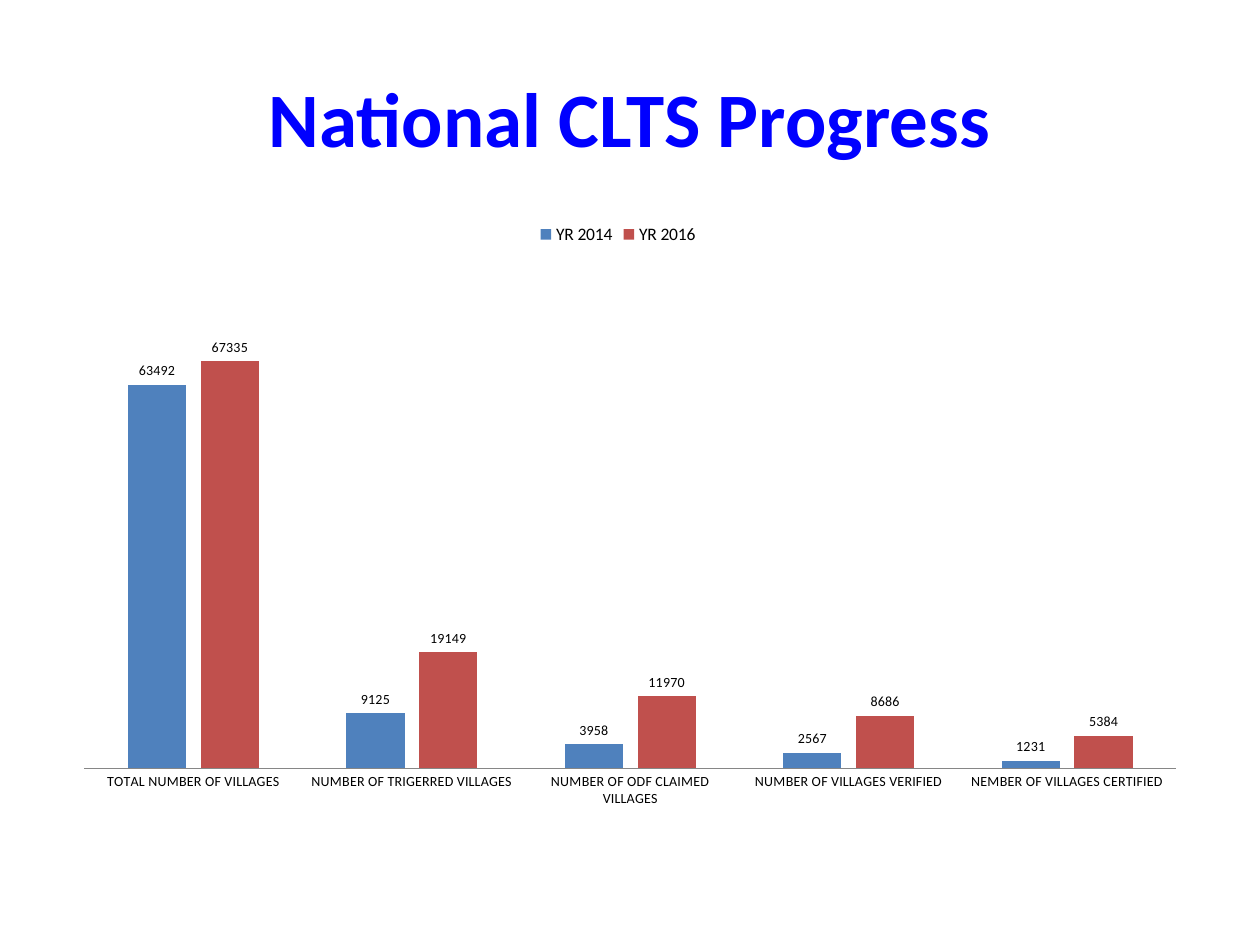
from lxml import etree
from pptx import Presentation
from pptx.chart.data import CategoryChartData
from pptx.dml.color import RGBColor
from pptx.enum.chart import (XL_CHART_TYPE as ChartType, XL_LABEL_POSITION as LabelPosition,
                             XL_LEGEND_POSITION as LegendPosition, XL_TICK_MARK as TickMark)
from pptx.enum.text import MSO_ANCHOR as Anchor, PP_ALIGN as Align
from pptx.oxml.ns import qn
from pptx.util import Inches, Pt

HEADING = "National CLTS Progress"
STAGES = [
    "TOTAL NUMBER OF VILLAGES",
    "NUMBER OF TRIGERRED VILLAGES",
    "NUMBER OF ODF CLAIMED VILLAGES",
    "NUMBER OF VILLAGES VERIFIED",
    "NEMBER OF VILLAGES CERTIFIED",
]
VILLAGES = {
    "YR 2014": (63492, 9125, 3958, 2567, 1231),
    "YR 2016": (67335, 19149, 11970, 8686, 5384),
}
THEME = {
    "font": "Calibri",
    "heading": "0000FF", "text": "000000", "axis": "868686",
    "years": {"YR 2014": "4F81BD", "YR 2016": "C0504D"},
    "heading_size": 44, "legend_size": 10, "label_size": 8,
}
HEADING_BOX = (0.5, 0.3, 9, 1.25)
CHART_BOX = (-0.02, 1.67, 9.85, 4.92)
PLOT_AREA = {"x": 0.07, "y": 0.12, "w": 0.88, "h": 0.78}  # fractions of the chart
AXIS_MAX = 80000


def style_font(font, size, color=THEME["text"], bold=False):
    font.name = THEME["font"]
    font.size = Pt(size)
    font.bold = bold
    font.color.rgb = RGBColor.from_string(color)


def write_text(shape, text, *, size, color, bold=False, align=Align.CENTER):
    frame = shape.text_frame
    frame.word_wrap = True
    frame.vertical_anchor = Anchor.MIDDLE
    paragraph = frame.paragraphs[0]
    paragraph.alignment = align
    run = paragraph.add_run()
    run.text = text
    style_font(run.font, size, color, bold)


def fix_plot_area(chart, fractions):
    """Pin the inner plot area to fractions of the chart's size."""
    plot_area = chart.element.find(".//" + qn("c:plotArea"))
    for automatic in plot_area.findall(qn("c:layout")):
        plot_area.remove(automatic)
    layout = etree.Element(qn("c:layout"))
    manual = etree.SubElement(layout, qn("c:manualLayout"))
    settings = [("layoutTarget", "inner"), ("xMode", "edge"), ("yMode", "edge"), *fractions.items()]
    for tag, value in settings:
        etree.SubElement(manual, qn("c:" + tag)).set("val", str(value))
    plot_area.insert(0, layout)


def add_progress_chart(slide):
    progress = CategoryChartData()
    progress.categories = STAGES
    for year, counts in VILLAGES.items():
        progress.add_series(year, counts)
    chart = slide.shapes.add_chart(
        ChartType.COLUMN_CLUSTERED, *map(Inches, CHART_BOX), progress).chart
    chart.has_title = False
    style_font(chart.font, THEME["legend_size"])

    chart.has_legend = True
    chart.legend.position = LegendPosition.TOP
    chart.legend.include_in_layout = False
    style_font(chart.legend.font, THEME["legend_size"])

    stage_axis, count_axis = chart.category_axis, chart.value_axis
    stage_axis.major_tick_mark = TickMark.NONE
    stage_axis.format.line.color.rgb = RGBColor.from_string(THEME["axis"])
    style_font(stage_axis.tick_labels.font, THEME["label_size"])
    count_axis.minimum_scale, count_axis.maximum_scale = 0, AXIS_MAX
    count_axis.has_major_gridlines = False
    count_axis.visible = False

    columns = chart.plots[0]
    columns.gap_width, columns.overlap = 150, -25
    columns.vary_by_categories = False
    for year in columns.series:
        year.format.fill.solid()
        year.format.fill.fore_color.rgb = RGBColor.from_string(THEME["years"][year.name])
        labels = year.data_labels
        labels.show_value = True
        labels.position = LabelPosition.OUTSIDE_END
        style_font(labels.font, THEME["label_size"])
    fix_plot_area(chart, PLOT_AREA)


def main():
    deck = Presentation()
    deck.slide_width, deck.slide_height = Inches(10), Inches(7.5)
    slide = deck.slides.add_slide(deck.slide_layouts[5])
    heading = slide.shapes.title
    heading.left, heading.top, heading.width, heading.height = map(Inches, HEADING_BOX)
    write_text(heading, HEADING, size=THEME["heading_size"], color=THEME["heading"], bold=True)
    add_progress_chart(slide)
    deck.save("out.pptx")


if __name__ == "__main__":
    main()
